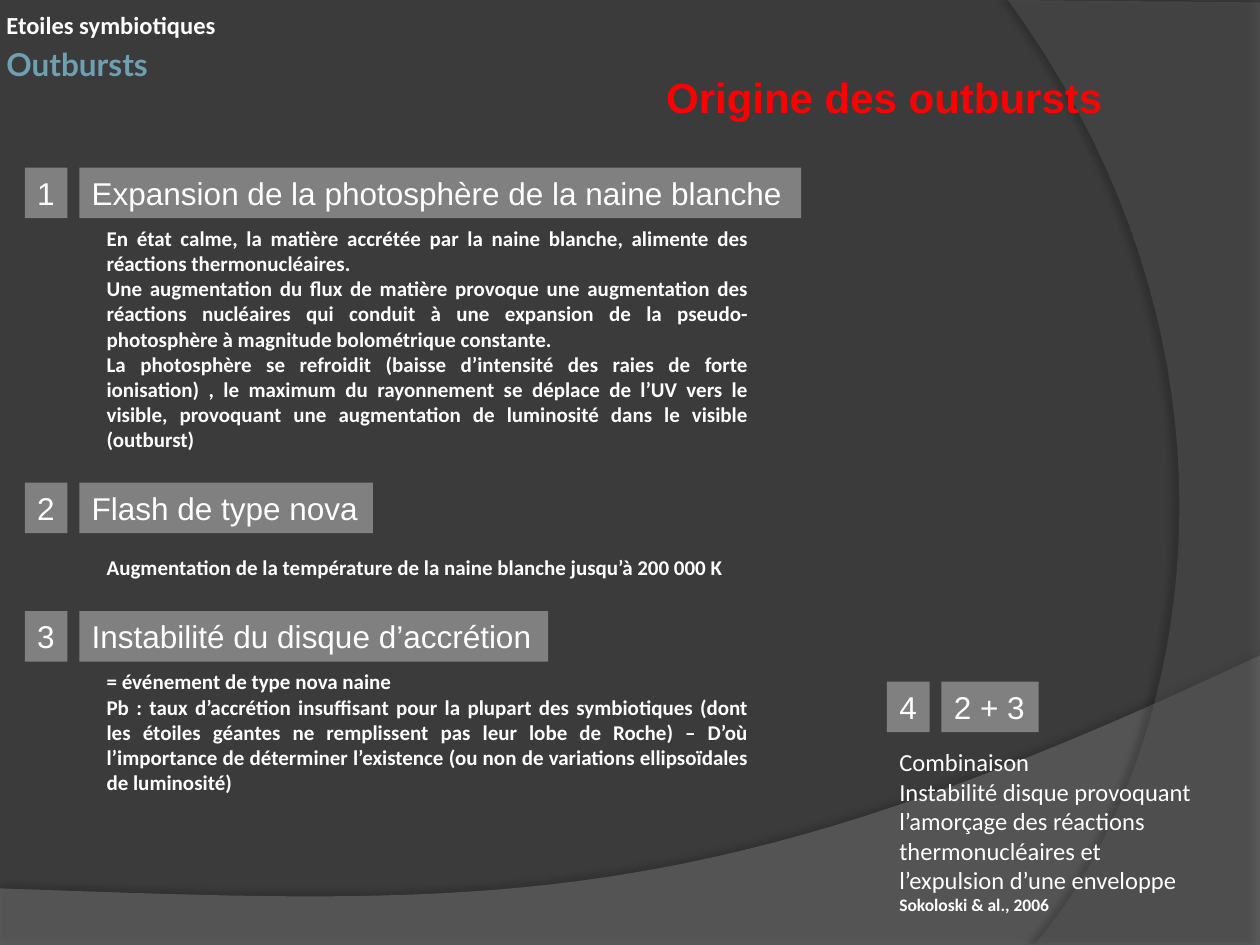
import dataclasses
import typing

import pptx
import pptx.dml.color
import pptx.enum.shapes
import pptx.enum.text
import pptx.oxml
import pptx.oxml.ns
import pptx.util

Cm = pptx.util.Cm
Align = pptx.enum.text.PP_ALIGN
Anchor = pptx.enum.text.MSO_ANCHOR
Fit = pptx.enum.text.MSO_AUTO_SIZE
Point = tuple[float, float]


@dataclasses.dataclass(frozen=True)
class Theme:
    back: str = "3B3B3B"
    floor: str = "7F7F7F"
    side: str = "5E5E5E"
    box: str = "808080"
    white: str = "FFFFFF"
    red: str = "FF0000"
    blue: str = "6EA0B0"
    body: str = "Calibri"
    head: str = "Arial"
    title: str = "Lato"
    big: int = 24
    mid: int = 18
    note: int = 14
    small: int = 12
    tiny: int = 10


THEME = Theme()


class Wave(typing.NamedTuple):
    lines: list[Point]   # straight corners, the last one starts the curve
    curve: list[Point]   # two handles and the end point
    fill: str
    alpha: int
    shade: int           # shadow opacity in percent
    dist: float          # shadow distance in points
    angle: int


class Item(typing.NamedTuple):
    left: float
    top: float
    wide: float          # width of the label
    tag: str
    label: str


class Block(typing.NamedTuple):
    top: float
    high: float
    text: str


WAVES = [
    Wave([(0, 17.91), (0, 19.08), (25.4, 19.08), (25.4, 13.21)],
         [(14.2, 18.52), (9.93, 18.26), (0, 17.91)],
         THEME.floor, 45, 35, 3.5, 270),
    Wave([(25.4, 0.05), (25.4, 19.05), (20.85, 19.05)],
         [(23.75, 15.72), (25.86, 7.62), (20.32, 0)],
         THEME.side, 40, 45, 4, 180),
]

ITEMS = [
    Item(0.5, 3.38, 14.55, "1", "Expansion de la photosphère de la naine blanche"),
    Item(0.5, 9.73, 5.92, "2", "Flash de type nova"),
    Item(0.5, 12.32, 9.45, "3", "Instabilité du disque d’accrétion"),
    Item(17.88, 13.74, 1.96, "4", "2 + 3"),
]

BLOCKS = [
    Block(4.42, 4.88,
          "En état calme, la matière accrétée par la naine blanche, alimente "
          "des réactions thermonucléaires.\n"
          "Une augmentation du flux de matière provoque une augmentation des "
          "réactions nucléaires qui conduit à une expansion de la "
          "pseudo-photosphère à magnitude bolométrique constante.\n"
          "La photosphère se refroidit (baisse d’intensité des raies de forte "
          "ionisation) , le maximum du rayonnement se déplace de l’UV vers le "
          "visible, provoquant une augmentation de luminosité dans le visible "
          "(outburst)"),
    Block(11.05, 0.76,
          "Augmentation de la température de la naine blanche jusqu’à 200 000 K"),
    Block(13.36, 3.84,
          "= événement de type nova naine\n"
          "Pb : taux d’accrétion insuffisant pour la plupart des symbiotiques "
          "(dont les étoiles géantes ne remplissent pas leur lobe de Roche) – "
          "D’où l’importance de déterminer l’existence (ou non de variations "
          "ellipsoïdales de luminosité)"),
]


def tint(text: str) -> pptx.dml.color.RGBColor:
    return pptx.dml.color.RGBColor.from_string(text)


def write(frame, text: str, *, size: int, font: str = THEME.body,
          color: str = THEME.white, bold: bool = False, align=Align.LEFT) -> None:
    """Add one paragraph per line, filling the empty first one."""
    for line in text.split("\n"):
        para = frame.add_paragraph() if frame.text else frame.paragraphs[0]
        para.alignment = align
        run = para.add_run()
        run.text = line
        run.font.size = pptx.util.Pt(size)
        run.font.name = font
        run.font.bold = bold
        run.font.color.rgb = tint(color)


def add_text(shapes, left: float, top: float, wide: float, high: float,
             wrap: bool = True, fit=Fit.SHAPE_TO_FIT_TEXT):
    frame = shapes.add_textbox(Cm(left), Cm(top), Cm(wide), Cm(high)).text_frame
    frame.word_wrap = wrap
    frame.auto_size = fit
    return frame


def add_head(shapes, top: float, wide: float, high: float, anchor):
    """Corner title line with tight margins."""
    frame = add_text(shapes, 0, top, wide, high, fit=Fit.NONE)
    frame.margin_left = frame.margin_right = Cm(0.13)
    frame.margin_top = frame.margin_bottom = 0
    frame.vertical_anchor = anchor
    return frame


def add_box(shapes, left: float, top: float, wide: float, text: str) -> None:
    rect = pptx.enum.shapes.MSO_SHAPE.RECTANGLE
    box = shapes.add_shape(rect, Cm(left), Cm(top), Cm(wide), Cm(1.02))
    box.shadow.inherit = False
    box.fill.solid()
    box.fill.fore_color.rgb = tint(THEME.box)
    box.line.fill.background()
    frame = box.text_frame
    frame.word_wrap = False
    frame.auto_size = Fit.SHAPE_TO_FIT_TEXT
    frame.vertical_anchor = Anchor.TOP
    write(frame, text, size=THEME.mid, font=THEME.head)


def add_item(shapes, item: Item) -> None:
    group = shapes.add_group_shape().shapes
    add_box(group, item.left + 1.1, item.top, item.wide, item.label)
    add_box(group, item.left, item.top, 0.86, item.tag)


def bend(start: Point, curve: list[Point], steps: int = 40) -> list[Point]:
    """Points along a cubic curve."""
    a, b, c, d = start, *curve
    out = []
    for step in range(1, steps + 1):
        t = step / steps
        u = 1 - t
        out.append(tuple(u**3 * a[i] + 3 * u * u * t * b[i]
                         + 3 * u * t * t * c[i] + t**3 * d[i] for i in (0, 1)))
    return out


def add_wave(shapes, wave: Wave) -> None:
    dots = wave.lines + bend(wave.lines[-1], wave.curve)
    first, *rest = [(Cm(x), Cm(y)) for x, y in dots]
    pen = shapes.build_freeform(*first)
    pen.add_line_segments(rest, close=True)
    shape = pen.convert_to_shape()
    shape.line.fill.background()
    shape.fill.solid()
    shape.fill.fore_color.rgb = tint(wave.fill)
    # Transparency and soft shadow
    space = pptx.oxml.ns.nsdecls("a")
    props = shape.fill.fore_color._xFill.find(pptx.oxml.ns.qn("a:srgbClr"))
    props.append(pptx.oxml.parse_xml(f'<a:alpha {space} val="{wave.alpha * 1000}"/>'))
    shape.shadow.inherit = False
    glow = shape.element.spPr.find(pptx.oxml.ns.qn("a:effectLst"))
    glow.append(pptx.oxml.parse_xml(
        f'<a:outerShdw {space} blurRad="{pptx.util.Pt(4)}" '
        f'dist="{pptx.util.Pt(wave.dist)}" dir="{wave.angle * 60000}" '
        f'algn="ctr" rotWithShape="0"><a:srgbClr val="000000">'
        f'<a:alpha val="{wave.shade * 1000}"/></a:srgbClr></a:outerShdw>'))


def main() -> None:
    deck = pptx.Presentation()
    deck.slide_width, deck.slide_height = Cm(25.4), Cm(19.05)
    slide = deck.slides.add_slide(deck.slide_layouts[6])
    shapes = slide.shapes

    # Backdrop
    slide.background.fill.solid()
    slide.background.fill.fore_color.rgb = tint(THEME.back)
    for wave in WAVES:
        add_wave(shapes, wave)

    # Titles
    write(add_head(shapes, 0.91, 8.89, 1.04, Anchor.TOP), "Outbursts",
          size=THEME.mid, font=THEME.title, color=THEME.blue, bold=True)
    write(add_head(shapes, 0, 7.62, 0.79, Anchor.BOTTOM), "Etoiles symbiotiques",
          size=THEME.note, bold=True)
    write(add_text(shapes, 13.18, 1.32, 9.4, 1.27, wrap=False),
          "Origine des outbursts",
          size=THEME.big, font=THEME.head, color=THEME.red, bold=True)

    # Numbered causes and their details
    for item in ITEMS:
        add_item(shapes, item)
    for block in BLOCKS:
        write(add_text(shapes, 1.9, block.top, 13.44, block.high), block.text,
              size=THEME.small, bold=True, align=Align.JUSTIFY)

    # Combined cause
    frame = add_text(shapes, 17.88, 14.94, 6.43, 3.68)
    write(frame, "Combinaison\nInstabilité disque provoquant l’amorçage des réactions "
          "thermonucléaires et l’expulsion d’une enveloppe", size=THEME.note)
    write(frame, "Sokoloski & al., 2006", size=THEME.tiny, bold=True)

    deck.save("out.pptx")


if __name__ == "__main__":
    main()
